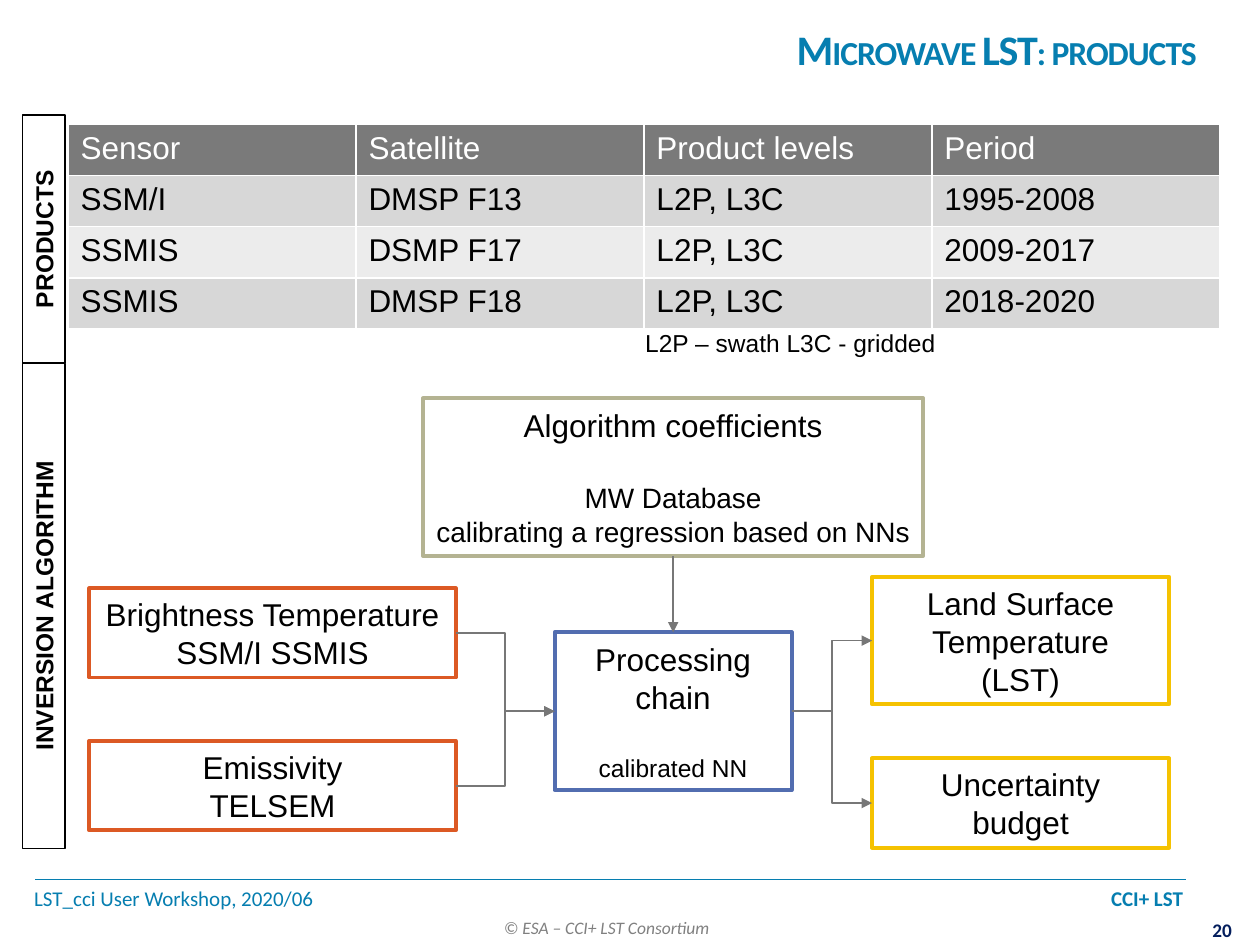
from lxml import etree
from pptx import Presentation
from pptx.dml.color import RGBColor
from pptx.enum import shapes, text
from pptx.oxml import ns
from pptx.util import Cm, Pt

WHITE = RGBColor(0xFF, 0xFF, 0xFF)
BLACK = RGBColor(0, 0, 0)
BLUE = RGBColor(0x06, 0x7E, 0xB0)
NAVY = RGBColor(0x04, 0x1E, 0x5D)
GREY = RGBColor(0x80, 0x80, 0x80)
ARROW_GREY = RGBColor(0x77, 0x77, 0x77)
HEADER_FILL = RGBColor(0x7A, 0x7A, 0x7A)
BAND_FILLS = [RGBColor(0xEC, 0xEC, 0xEC), RGBColor(0xD7, 0xD7, 0xD7)]
ORANGE = RGBColor(0xDC, 0x59, 0x24)
INDIGO = RGBColor(0x52, 0x6D, 0xB0)
YELLOW = RGBColor(0xF5, 0xC2, 0x01)
OLIVE = RGBColor(0xB4, 0xB3, 0x92)

TITLE = "Microwave LST: products"
PRODUCTS = [
    ("Sensor", "Satellite", "Product levels", "Period"),
    ("SSM/I", "DMSP F13", "L2P, L3C", "1995-2008"),
    ("SSMIS", "DSMP F17", "L2P, L3C", "2009-2017"),
    ("SSMIS", "DMSP F18", "L2P, L3C", "2018-2020"),
]
TABLE_AREA = (1.37, 2.51, 23.22, 4.12)

# name: (left, top, width, height in cm), outline, [(line, size, space before)]
FLOW_BOXES = {
    "brightness": ((1.8, 11.86, 7.39, 1.8), ORANGE,
                   [("Brightness Temperature", 18, 0), ("SSM/I SSMIS", 18, 0)]),
    "emissivity": ((1.8, 14.94, 7.39, 1.8), ORANGE,
                   [("Emissivity", 18, 0), ("TELSEM", 18, 0)]),
    "processing": ((11.18, 12.75, 4.78, 3.18), INDIGO,
                   [("Processing chain", 18, 0), ("calibrated NN", 14, 21)]),
    "temperature": ((17.58, 11.63, 5.99, 2.57), YELLOW,
                    [("Land Surface Temperature", 18, 0), ("(LST)", 18, 0)]),
    "uncertainty": ((17.58, 15.29, 5.99, 1.8), YELLOW,
                    [("Uncertainty", 18, 0), ("budget", 18, 0)]),
    "coefficients": ((8.53, 8.03, 10.08, 3.18), OLIVE,
                     [("Algorithm coefficients", 18, 0), ("MW Database", 16, 21),
                      ("calibrating a regression based on NNs", 16, 0)]),
}
TOP, LEFT, BOTTOM, RIGHT = range(4)
ELBOW, STRAIGHT = shapes.MSO_CONNECTOR.ELBOW, shapes.MSO_CONNECTOR.STRAIGHT
FLOW_ARROWS = [
    ("brightness", RIGHT, "processing", LEFT, ELBOW),
    ("emissivity", RIGHT, "processing", LEFT, ELBOW),
    ("processing", RIGHT, "temperature", LEFT, ELBOW),
    ("processing", RIGHT, "uncertainty", LEFT, ELBOW),
    ("coefficients", BOTTOM, "processing", TOP, STRAIGHT),
]
SIDE_LABELS = [("PRODUCTS", 5.0), ("INVERSION ALGORITHM", 9.78)]
SIDE_CENTRE, SIDE_TOP, SIDE_WIDTH = 0.88, 2.32, 0.86

CENTRE, END = text.PP_ALIGN.CENTER, text.PP_ALIGN.RIGHT


def lengths(area):
    return [Cm(value) for value in area]


def style(para, size, color=BLACK, name="Arial", bold=False, italic=False, align=None):
    para.alignment = align
    font = para.font
    font.name, font.size, font.bold, font.italic = name, Pt(size), bold, italic
    font.color.rgb = color


def add_text(page, area, words, size, wrap=True, margins=None, **look):
    box = page.shapes.add_textbox(*lengths(area))
    frame = box.text_frame
    frame.word_wrap = wrap
    if margins:
        frame.margin_left = frame.margin_right = Cm(margins[0])
        frame.margin_top = frame.margin_bottom = Cm(margins[1])
    para = frame.paragraphs[0]
    para.text = words
    style(para, size, **look)
    return para


def add_box(page, area, outline, weight, lines, bold=False):
    box = page.shapes.add_shape(shapes.MSO_SHAPE.RECTANGLE, *lengths(area))
    box.shadow.inherit = False
    box.fill.solid()
    box.fill.fore_color.rgb = WHITE
    box.line.color.rgb = outline
    box.line.width = Pt(weight)
    frame = box.text_frame
    frame.word_wrap = True
    frame.vertical_anchor = text.MSO_ANCHOR.MIDDLE
    for index, (words, size, gap) in enumerate(lines):
        para = frame.add_paragraph() if index else frame.paragraphs[0]
        para.text = words
        if gap:
            para.space_before = Pt(gap)
        style(para, size, bold=bold, align=CENTRE)
    return box


def add_line(page, kind, color, ends=(0, 0, 0, 0)):
    line = page.shapes.add_connector(kind, *lengths(ends))
    line.line.color.rgb = color
    line.line.width = Pt(1)
    etree.SubElement(line._element.spPr, ns.qn("a:effectLst"))
    return line


def add_title(page):
    title = page.shapes.title
    title.left, title.top, title.width, title.height = lengths((8.89, 0.13, 15.01, 1.7))
    frame = title.text_frame
    frame.auto_size = text.MSO_AUTO_SIZE.NONE
    frame.vertical_anchor = text.MSO_ANCHOR.MIDDLE
    para = frame.paragraphs[0]
    para.text = TITLE
    style(para, 24, BLUE, "Calibri", bold=True, align=END)
    properties = para.runs[0]._r.get_or_add_rPr()
    properties.set("cap", "small")
    properties.set("spc", "-60")


def add_footer(page):
    add_line(page, STRAIGHT, BLUE, (0.71, 17.73, 23.9, 17.73))
    para = add_text(page, (0.69, 17.73, 23.21, 0.76), "", 12, margins=(0, 0.13),
                    color=BLUE, name="Calibri")
    tabs = etree.Element(ns.qn("a:tabLst"))
    etree.SubElement(tabs, ns.qn("a:tab"), pos=str(Cm(23.16)), algn="r")
    para._p.get_or_add_pPr().insert(0, tabs)
    for words, bold in [("LST_cci User Workshop, 2020/06\t", False), ("CCI+ LST", True)]:
        span = para.add_run()
        span.text = words
        span.font.bold = bold
    add_text(page, (9.91, 18.36, 4.72, 0.69), "© ESA – CCI+ LST Consortium", 10,
             wrap=False, color=GREY, name="Calibri", italic=True)
    add_text(page, (24.31, 18.52, 0.66, 0.48), "20", 11, wrap=False, margins=(0, 0),
             color=NAVY, name="Calibri", bold=True, align=CENTRE)


def add_products(page):
    table = page.shapes.add_table(len(PRODUCTS), len(PRODUCTS[0]),
                                  *lengths(TABLE_AREA)).table
    for row, values in enumerate(PRODUCTS):
        for column, value in enumerate(values):
            cell = table.cell(row, column)
            cell.text = value
            cell.fill.solid()
            cell.fill.fore_color.rgb = BAND_FILLS[row % 2] if row else HEADER_FILL
            style(cell.text_frame.paragraphs[0], 18, BLACK if row else WHITE)
    add_text(page, (12.57, 6.48, 6.73, 0.86), "L2P – swath L3C - gridded", 14, align=CENTRE)


def add_flow(page):
    boxes = {name: add_box(page, area, outline, 2.25, lines)
             for name, (area, outline, lines) in FLOW_BOXES.items()}
    for source, start, target, end, kind in FLOW_ARROWS:
        arrow = add_line(page, kind, ARROW_GREY)
        arrow.begin_connect(boxes[source], start)
        arrow.end_connect(boxes[target], end)
        etree.SubElement(arrow.line._get_or_add_ln(), ns.qn("a:tailEnd"), type="triangle")


def add_side_labels(page):
    """Stack the labels downwards, each turned to read from bottom to top."""
    top = SIDE_TOP
    for words, length in SIDE_LABELS:
        area = (SIDE_CENTRE - length / 2, top + (length - SIDE_WIDTH) / 2, length, SIDE_WIDTH)
        add_box(page, area, BLACK, 0.75, [(words, 14, 0)], bold=True).rotation = 270
        top += length


def main():
    deck = Presentation()
    deck.slide_width, deck.slide_height = Cm(25.4), Cm(19.05)
    page = deck.slides.add_slide(deck.slide_layouts[5])
    add_footer(page)
    add_title(page)
    add_products(page)
    add_flow(page)
    add_side_labels(page)
    deck.save("out.pptx")


if __name__ == "__main__":
    main()
